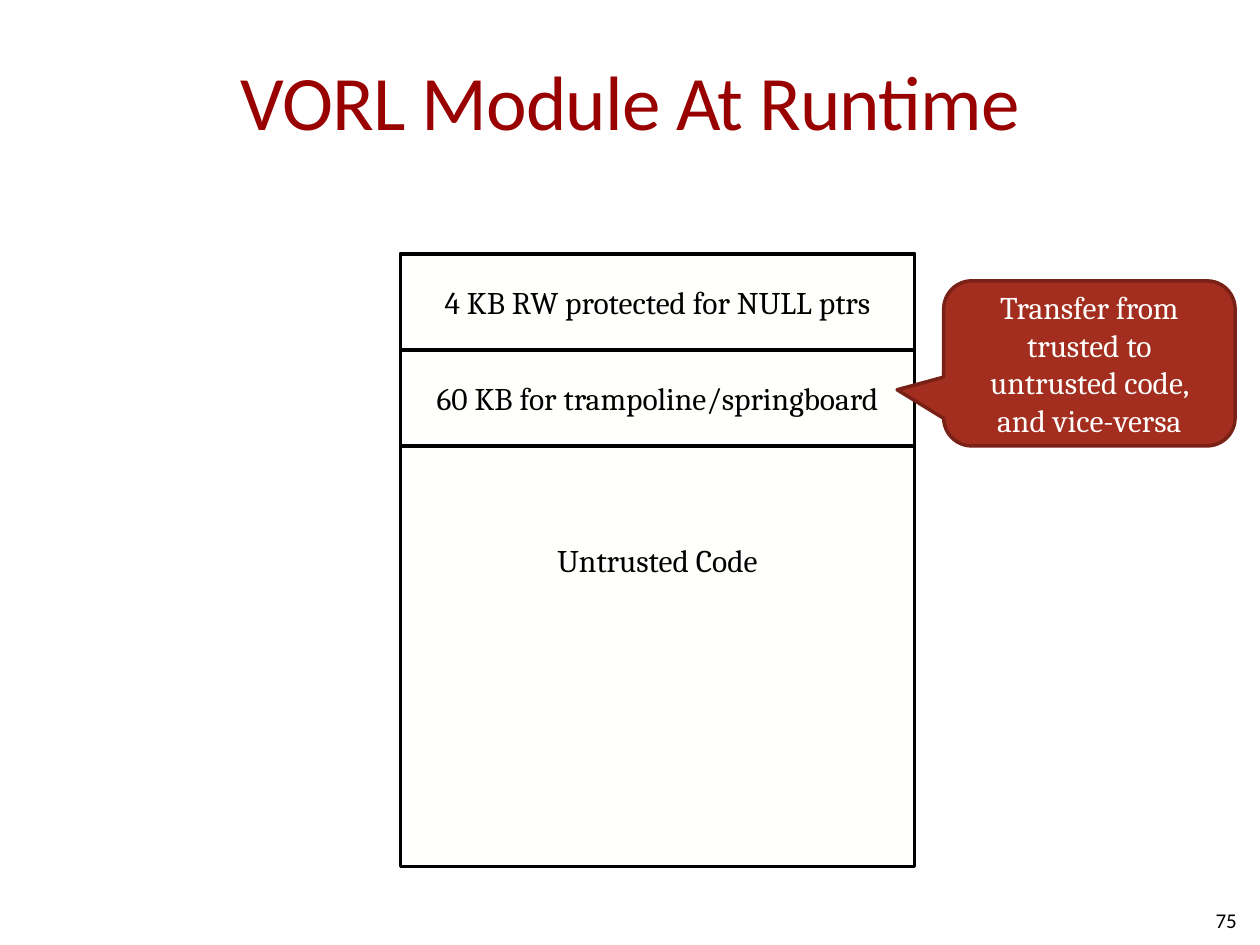
"""Build the slide showing the memory layout of a sandboxed module at runtime."""
from pptx import Presentation
from pptx import util as u
from pptx.dml.color import RGBColor
from pptx.enum import shapes, text

Pt = u.Pt
C = {"title": "990000", "ink": "000000", "paper": "FFFFFE",
     "callout": "A32D1F", "edge": "792117"}
CENTER, RIGHT = text.PP_ALIGN.CENTER, text.PP_ALIGN.RIGHT


def write(s, words, size, font, color, align=CENTER):
    tf = s.text_frame
    tf.word_wrap = True
    tf.vertical_anchor = text.MSO_ANCHOR.MIDDLE
    p = tf.paragraphs[0]
    p.alignment = align
    r = p.add_run()
    r.text = words
    for name, value in {"size": Pt(size), "name": font}.items():
        setattr(r.font, name, value)
    r.font.color.rgb = RGBColor.from_string(C[color])
    return r


def block(kind, box, words, fill, line, color):
    s = sp.add_shape(kind, *map(Pt, box))
    s.shadow.inherit = False
    s.fill.solid()
    s.fill.fore_color.rgb = RGBColor.from_string(C[fill])
    s.line.color.rgb = RGBColor.from_string(C[line])
    s.line.width = Pt(2)
    write(s, words, 18, "Cambria", color)
    return s


prs = Presentation()
prs.slide_width, prs.slide_height = Pt(720), Pt(540)
sp = prs.slides.add_slide(prs.slide_layouts[6]).shapes

title = sp.add_textbox(Pt(36), Pt(12), Pt(648), Pt(90))
for name, value in {"margin_left": 0, "margin_right": 0}.items():
    setattr(title.text_frame, name, value)
r = write(title, "VORL Module At Runtime", 44, "Calibri", "title")
r.font._element.set("spc", "-50")

left, top, width, row = 228.8, 145.2, 293.8, 54.8
regions = [
    ("Untrusted Code", 0, 350),
    ("4 KB RW protected for NULL ptrs", 0, row),
    ("60 KB for trampoline/springboard", row, row),
]
for words, offset, height in regions:
    block(shapes.MSO_SHAPE.RECTANGLE, (left, top + offset, width, height),
          words, "paper", "ink", "ink")

callout = block(shapes.MSO_SHAPE.ROUNDED_RECTANGULAR_CALLOUT,
                (539.3, 160.5, 166.5, 94.3),
                "Transfer from trusted to untrusted code, and vice-versa",
                "callout", "edge", "paper")
for i, value in enumerate((-0.66, 0.16, 0.17)):
    callout.adjustments[i] = value

number = sp.add_textbox(Pt(546), Pt(511.2), Pt(167.8), Pt(28.8))
write(number, "75", 12, "Calibri", "ink", RIGHT)

prs.save("out.pptx")
